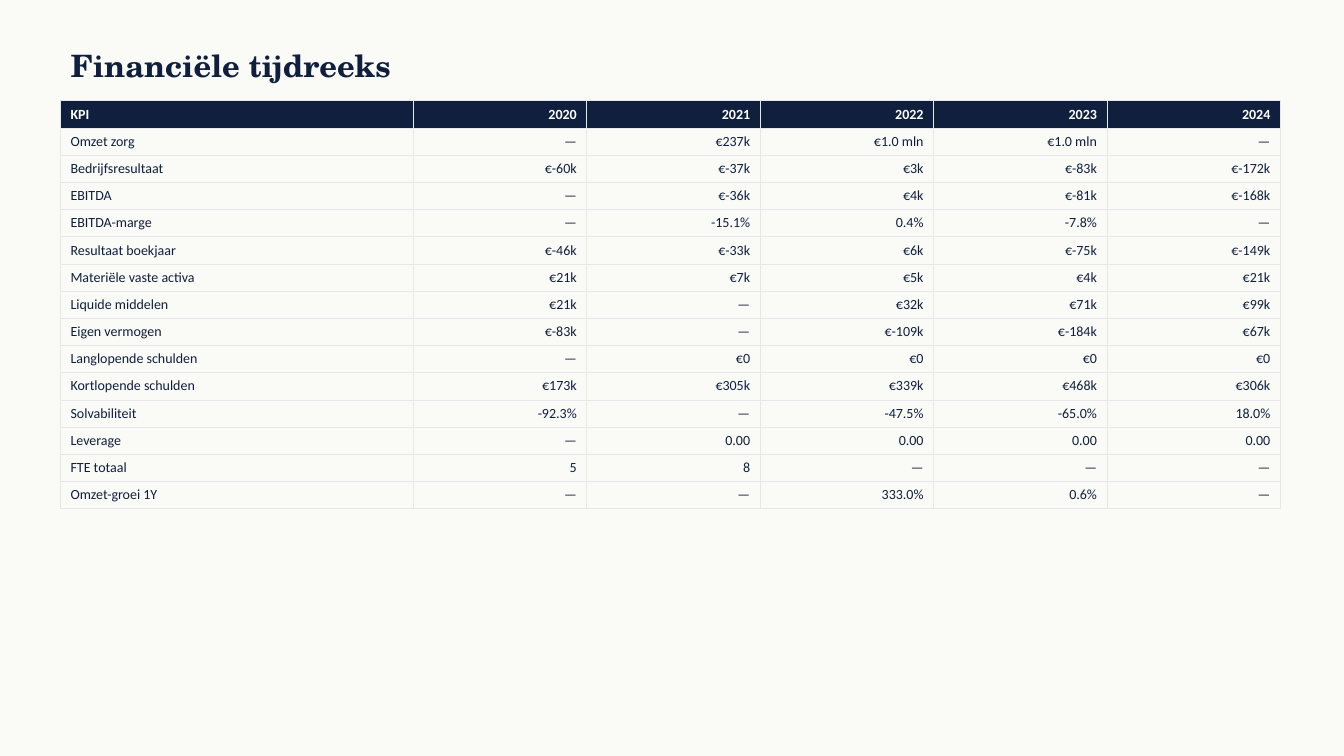
from lxml.etree import SubElement
from pptx import Presentation
from pptx.dml.color import RGBColor
from pptx.enum.text import MSO_ANCHOR, MSO_AUTO_SIZE, PP_ALIGN
from pptx.oxml.ns import qn
from pptx.util import Inches, Pt

NAVY, WHITE, PAPER, RULE = "0F1F3D", "FFFFFF", "FAFAF7", "E5E7EB"
YEARS = ["2020", "2021", "2022", "2023", "2024"]
KPIS = [
    ["Omzet zorg", "—", "€237k", "€1.0 mln", "€1.0 mln", "—"],
    ["Bedrijfsresultaat", "€-60k", "€-37k", "€3k", "€-83k", "€-172k"],
    ["EBITDA", "—", "€-36k", "€4k", "€-81k", "€-168k"],
    ["EBITDA-marge", "—", "-15.1%", "0.4%", "-7.8%", "—"],
    ["Resultaat boekjaar", "€-46k", "€-33k", "€6k", "€-75k", "€-149k"],
    ["Materiële vaste activa", "€21k", "€7k", "€5k", "€4k", "€21k"],
    ["Liquide middelen", "€21k", "—", "€32k", "€71k", "€99k"],
    ["Eigen vermogen", "€-83k", "—", "€-109k", "€-184k", "€67k"],
    ["Langlopende schulden", "—", "€0", "€0", "€0", "€0"],
    ["Kortlopende schulden", "€173k", "€305k", "€339k", "€468k", "€306k"],
    ["Solvabiliteit", "-92.3%", "—", "-47.5%", "-65.0%", "18.0%"],
    ["Leverage", "—", "0.00", "0.00", "0.00", "0.00"],
    ["FTE totaal", "5", "8", "—", "—", "—"],
    ["Omzet-groei 1Y", "—", "—", "333.0%", "0.6%", "—"],
]


def rgb(color):
    return RGBColor.from_string(color)


def grid(n):
    return Inches(n / 10)


class Deck:
    heading_font, body_font = "TeX Gyre Schola", "Calibri"

    def __init__(self):
        self.prs = Presentation()
        self.prs.slide_width, self.prs.slide_height = Inches(13.33), Inches(7.5)
        self.s = self.prs.slides.add_slide(self.prs.slide_layouts[5])
        self.s.background.fill.solid()
        self.s.background.fill.fore_color.rgb = rgb(PAPER)

    def set_text(self, tf, text, font, size, color, bold, align):
        tf.text = text
        p = tf.paragraphs[0]
        p.alignment = align
        for r in p.runs:
            r.font.name, r.font.size, r.font.bold = font, Pt(size), bold
            r.font.color.rgb = rgb(color)

    def title(self, text, col, row, cols, rows):
        sp = self.s.shapes.title
        sp.left, sp.top, sp.width, sp.height = map(grid, (col, row, cols, rows))
        tf = sp.text_frame
        tf.auto_size, tf.word_wrap = MSO_AUTO_SIZE.NONE, True
        tf.vertical_anchor = MSO_ANCHOR.MIDDLE
        self.set_text(tf, text, self.heading_font, 22, NAVY, True, PP_ALIGN.LEFT)

    def borders(self, cell):
        tcPr = cell._tc.get_or_add_tcPr()
        for i, side in enumerate(("lnL", "lnR", "lnT", "lnB")):
            ln = SubElement(tcPr, qn(f"a:{side}"), w=str(Pt(0.5)))
            fill = SubElement(ln, qn("a:solidFill"))
            SubElement(fill, qn("a:srgbClr"), val=RULE)
            tcPr.insert(i, ln)

    def table(self, data, col, row, widths, row_height):
        frame = self.s.shapes.add_table(
            len(data), len(widths), grid(col), grid(row),
            grid(sum(widths)), grid(row_height * len(data)))
        tbl = frame.table
        tbl.horz_banding = False
        for column, width in zip(tbl.columns, widths):
            column.width = grid(width)
        for i, values in enumerate(data):
            tbl.rows[i].height = grid(row_height)
            for j, value in enumerate(values):
                self.cell(tbl.cell(i, j), value, i == 0, j == 0)

    def cell(self, cell, text, header, label):
        if header:
            cell.fill.solid()
            cell.fill.fore_color.rgb = rgb(NAVY)
        else:
            cell.fill.background()
        self.borders(cell)
        self.set_text(cell.text_frame, text, self.body_font, 10,
                      WHITE if header else NAVY, header,
                      PP_ALIGN.LEFT if label else PP_ALIGN.RIGHT)


def main():
    deck = Deck()
    deck.title("Financiële tijdreeks", 6, 4, 120, 5)
    deck.table([["KPI"] + YEARS] + KPIS, 6, 10,
               [35] + [17.2] * len(YEARS), 2.7)
    deck.prs.save("out.pptx")


if __name__ == "__main__":
    main()
